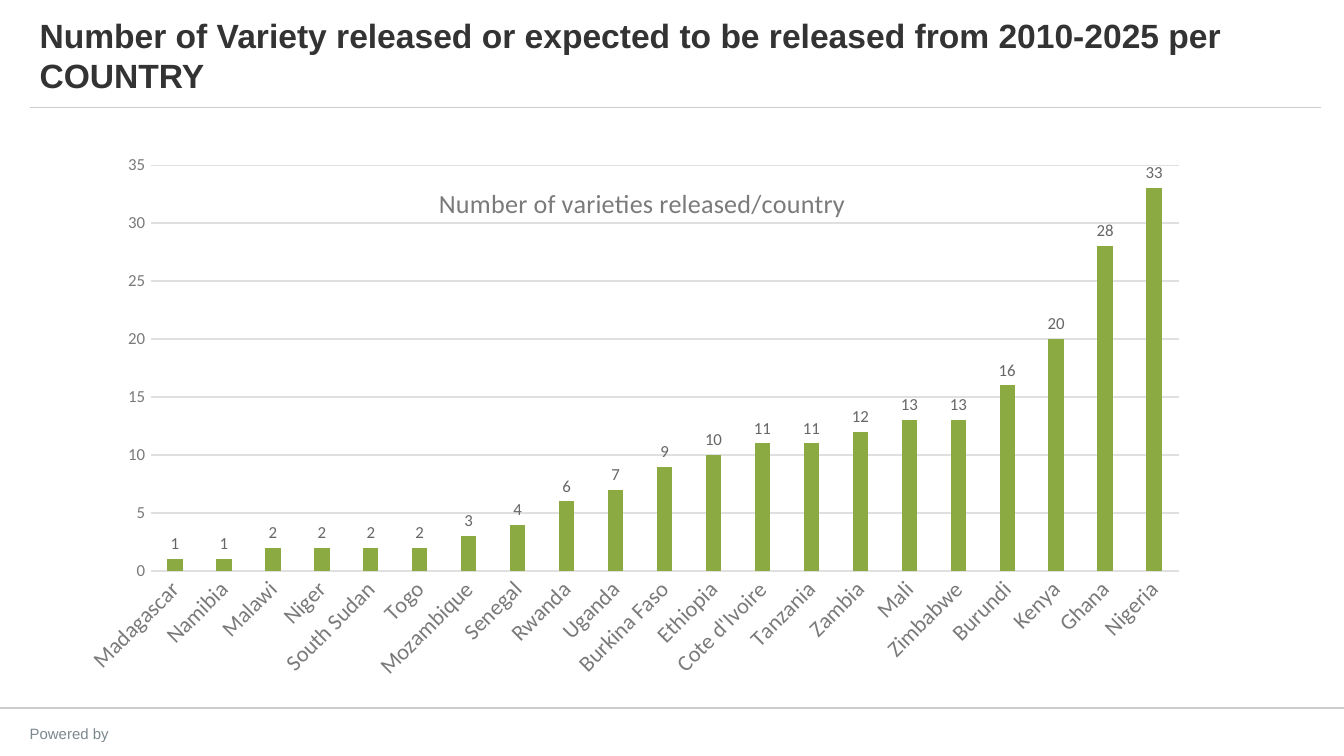
from dataclasses import dataclass

from lxml import etree
from pptx import Presentation
from pptx import util as u
from pptx.chart.data import CategoryChartData
from pptx.dml.color import RGBColor
from pptx.enum import chart as charts
from pptx.enum import shapes, text
from pptx.oxml.ns import qn


@dataclass(frozen=True)
class Theme:
    heading_font: str = "Arial"
    chart_font: str = "Calibri"
    heading: str = "333333"
    footer: str = "7C878E"
    axis: str = "7A7A7A"
    label: str = "666666"
    grid: str = "E0E0E0"
    rule: str = "CCCCCC"
    bar: str = "8BAB42"
    heading_size: float = 18
    chart_title_size: float = 14
    category_size: float = 12
    chart_size: float = 10
    value_size: float = 9
    footer_size: float = 8


THEME = Theme()
WIDTH = 10
HEIGHT = WIDTH * 9 / 16
CHART_WIDTH, CHART_HEIGHT = 8.45, 4.57
RELEASES = {
    "Madagascar": 1, "Namibia": 1, "Malawi": 2, "Niger": 2,
    "South Sudan": 2, "Togo": 2, "Mozambique": 3, "Senegal": 4,
    "Rwanda": 6, "Uganda": 7, "Burkina Faso": 9, "Ethiopia": 10,
    "Cote d'Ivoire": 11, "Tanzania": 11, "Zambia": 12, "Mali": 13,
    "Zimbabwe": 13, "Burundi": 16, "Kenya": 20, "Ghana": 28, "Nigeria": 33,
}


def across(percent):
    return u.Inches(WIDTH * percent / 100)


def down(percent):
    return u.Inches(HEIGHT * percent / 100)


def frame(left, top, width, height):
    return across(left), down(top), across(width), down(height)


def format_font(font, name, size, color, bold=False):
    font.name = name
    font.size = u.Pt(size)
    font.bold = bold
    font.color.rgb = RGBColor.from_string(color)


def write(text_frame, words, *, font, size, color, bold=False, align=None):
    paragraph = text_frame.paragraphs[0]
    paragraph.alignment = align
    run = paragraph.add_run()
    run.text = words
    format_font(run.font, font, size, color, bold)


def format_line(line, color, width):
    line.color.rgb = RGBColor.from_string(color)
    line.width = u.Pt(width)


def add_rule(slide, start, end, top, width):
    rule = slide.shapes.add_connector(
        shapes.MSO_CONNECTOR.STRAIGHT, across(start), down(top), across(end), down(top))
    format_line(rule.line, THEME.rule, width)
    etree.SubElement(rule._element.spPr, qn("a:effectLst"))


def add_heading(slide, words):
    title = slide.shapes.title
    title.left, title.top, title.width, title.height = frame(1.95, 0.5, 90, 13)
    title.text_frame.auto_size = text.MSO_AUTO_SIZE.NONE
    title.text_frame.vertical_anchor = text.MSO_ANCHOR.BOTTOM
    write(title.text_frame, words, font=THEME.heading_font, size=THEME.heading_size,
          color=THEME.heading, bold=True, align=text.PP_ALIGN.LEFT)


def add_footer(slide, words):
    box = slide.shapes.add_textbox(*frame(-0.6, 95.4, 11.5, 3.2))
    box.text_frame.word_wrap = True
    box.text_frame.vertical_anchor = text.MSO_ANCHOR.MIDDLE
    box.text_frame.margin_top = box.text_frame.margin_bottom = 0
    write(box.text_frame, words, font=THEME.heading_font, size=THEME.footer_size,
          color=THEME.footer, align=text.PP_ALIGN.CENTER)


def place(element, index, left, top, width=None, height=None):
    for layout in element.findall(qn("c:layout")):
        element.remove(layout)
    settings = {"xMode": "edge", "yMode": "edge",
                "x": left / CHART_WIDTH, "y": top / CHART_HEIGHT}
    if width and height:
        settings = {"layoutTarget": "inner", **settings,
                    "w": width / CHART_WIDTH, "h": height / CHART_HEIGHT}
    layout = etree.Element(qn("c:layout"))
    manual = etree.SubElement(layout, qn("c:manualLayout"))
    for name, value in settings.items():
        etree.SubElement(manual, qn(f"c:{name}")).set("val", str(value))
    element.insert(index, layout)


def format_chart_title(chart, words):
    chart.has_title = True
    title = chart.chart_title
    write(title.text_frame, words, font=THEME.chart_font,
          size=THEME.chart_title_size, color=THEME.axis)
    place(title._element, 1, 2.74, 0.76)
    title._element.find(qn("c:overlay")).set("val", "1")


def format_axis(axis, size):
    axis.major_tick_mark = axis.minor_tick_mark = charts.XL_TICK_MARK.NONE
    format_font(axis.tick_labels.font, THEME.chart_font, size, THEME.axis)


def format_axes(chart):
    countries, counts = chart.category_axis, chart.value_axis
    format_axis(countries, THEME.category_size)
    format_line(countries.format.line, THEME.grid, 0.75)
    slant = countries._element.find(qn("c:txPr")).find(qn("a:bodyPr"))
    slant.set("rot", "-2700000")
    slant.set("vert", "horz")
    format_axis(counts, THEME.value_size)
    counts.minimum_scale, counts.maximum_scale, counts.major_unit = 0, 35, 5
    counts.format.line.fill.background()
    format_line(counts.major_gridlines.format.line, THEME.grid, 0.75)


def format_bars(plot):
    plot.gap_width, plot.overlap = 219, -27
    plot.vary_by_categories = False
    series = plot.series[0]
    series.invert_if_negative = False
    series.format.fill.solid()
    series.format.fill.fore_color.rgb = RGBColor.from_string(THEME.bar)
    labels = series.data_labels
    labels.show_value = True
    labels.position = charts.XL_LABEL_POSITION.OUTSIDE_END
    format_font(labels.font, THEME.chart_font, THEME.value_size, THEME.label)


def add_release_chart(slide):
    data = CategoryChartData()
    data.categories = list(RELEASES)
    data.add_series("Series 1", list(RELEASES.values()))
    chart = slide.shapes.add_chart(
        charts.XL_CHART_TYPE.COLUMN_CLUSTERED, u.Inches(0.49), u.Inches(0.58),
        u.Inches(CHART_WIDTH), u.Inches(CHART_HEIGHT), data).chart
    format_font(chart.font, THEME.chart_font, THEME.chart_size, THEME.heading)
    chart.has_legend = False
    format_chart_title(chart, "Number of varieties released/country")
    format_axes(chart)
    format_bars(chart.plots[0])
    place(chart._chartSpace.chart.plotArea, 0, 0.63, 0.65, 7.65, 3.02)


def main():
    presentation = Presentation()
    presentation.slide_width, presentation.slide_height = across(100), down(100)
    slide = presentation.slides.add_slide(presentation.slide_layouts[5])
    add_rule(slide, 0, 100, 93.7, 1)
    add_rule(slide, 2.2, 98.3, 14.2, 0.5)
    add_footer(slide, "Powered by")
    add_heading(slide, "Number of Variety released or expected to be released "
                       "from 2010-2025 per COUNTRY")
    add_release_chart(slide)
    presentation.save("out.pptx")


if __name__ == "__main__":
    main()
